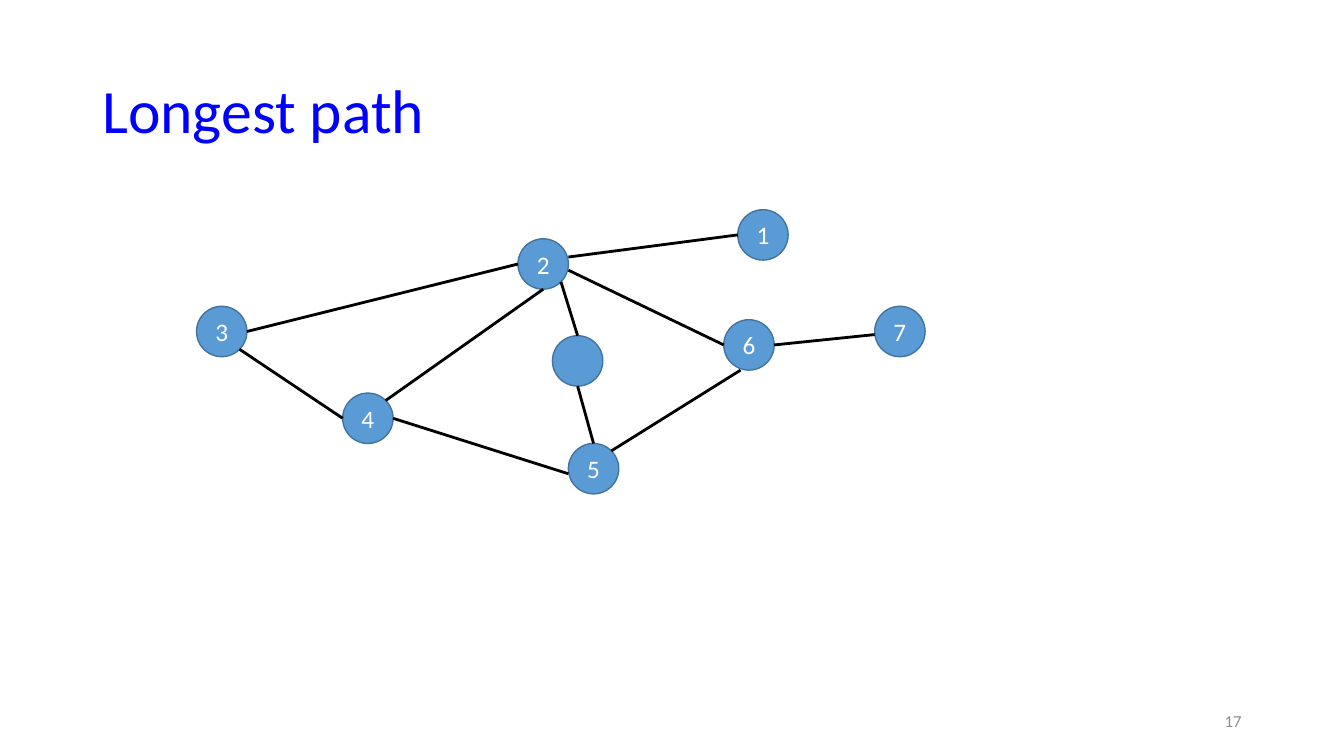
import dataclasses

import pptx
import pptx.dml.color
import pptx.enum.shapes
import pptx.enum.text
import pptx.oxml.ns
import pptx.shapes.base
import pptx.slide
import pptx.util
from lxml import etree

Pt = pptx.util.Pt
Align = pptx.enum.text.PP_ALIGN

COLOURS = {
    "title": "0000FF",
    "node": "5B9BD5",
    "node_line": "43739E",
    "node_text": "FFFFFF",
    "edge": "000000",
    "page_number": "8C8C8C",
}
FONT = "Calibri"
RADIUS = 18
DIAGONAL = 12.7

# Points on a node, as offsets from its centre
LEFT, RIGHT = (-RADIUS, 0), (RADIUS, 0)
TOP, BOTTOM = (0, -RADIUS), (0, RADIUS)
UPPER_RIGHT, LOWER_RIGHT = (DIAGONAL, -DIAGONAL), (DIAGONAL, DIAGONAL)


@dataclasses.dataclass(frozen=True)
class Node:
    x: float
    y: float
    label: str = ""


@dataclasses.dataclass(frozen=True)
class Edge:
    start: str
    start_offset: tuple[float, float]
    end: str
    end_offset: tuple[float, float]


NODES = {
    "1": Node(545, 167.8, "1"),
    "2": Node(388, 188.6, "2"),
    "3": Node(158.4, 236.8, "3"),
    "4": Node(262.8, 298.8, "4"),
    "5": Node(424, 334.8, "5"),
    "6": Node(535, 246.4, "6"),
    "7": Node(642.8, 236.8, "7"),
    "unlabelled": Node(412.6, 257.8),
}

EDGES = [
    Edge("3", RIGHT, "2", LEFT),
    Edge("3", LOWER_RIGHT, "4", LEFT),
    Edge("4", UPPER_RIGHT, "2", BOTTOM),
    Edge("4", RIGHT, "5", (-RADIUS, 3.6)),
    Edge("2", (RADIUS, 4.4), "6", LEFT),
    Edge("5", UPPER_RIGHT, "6", (-6, RADIUS)),
    Edge("6", RIGHT, "7", (-RADIUS, 2.2)),
    Edge("2", (RADIUS, -5), "1", LEFT),
    Edge("unlabelled", TOP, "2", LOWER_RIGHT),
    Edge("5", TOP, "unlabelled", BOTTOM),
]


def colour(name: str) -> pptx.dml.color.RGBColor:
    return pptx.dml.color.RGBColor.from_string(COLOURS[name])


def write_text(box: pptx.shapes.base.BaseShape, text: str, *, size: float, colour_name: str,
               align: Align = Align.LEFT, line_spacing: float = 1.0) -> None:
    frame = box.text_frame
    frame.word_wrap = True
    frame.vertical_anchor = pptx.enum.text.MSO_ANCHOR.MIDDLE
    para = frame.paragraphs[0]
    para.alignment = align
    para.line_spacing = line_spacing
    span = para.add_run()
    span.text = text
    span.font.name = FONT
    span.font.size = Pt(size)
    span.font.color.rgb = colour(colour_name)


def draw_node(page: pptx.slide.Slide, node: Node) -> None:
    circle = page.shapes.add_shape(
        pptx.enum.shapes.MSO_SHAPE.OVAL,
        Pt(node.x - RADIUS), Pt(node.y - RADIUS), Pt(2 * RADIUS), Pt(2 * RADIUS))
    circle.shadow.inherit = False
    circle.fill.solid()
    circle.fill.fore_color.rgb = colour("node")
    circle.line.color.rgb = colour("node_line")
    circle.line.width = Pt(1)
    if node.label:
        write_text(circle, node.label, size=18, colour_name="node_text", align=Align.CENTER)


def draw_edge(page: pptx.slide.Slide, edge: Edge) -> None:
    start, end = NODES[edge.start], NODES[edge.end]
    line = page.shapes.add_connector(
        pptx.enum.shapes.MSO_CONNECTOR.STRAIGHT,
        Pt(start.x + edge.start_offset[0]), Pt(start.y + edge.start_offset[1]),
        Pt(end.x + edge.end_offset[0]), Pt(end.y + edge.end_offset[1]))
    line.line.color.rgb = colour("edge")
    line.line.width = Pt(2)
    etree.SubElement(line._element.spPr, pptx.oxml.ns.qn("a:effectLst"))


def main() -> None:
    deck = pptx.Presentation()
    deck.slide_width, deck.slide_height = Pt(960), Pt(540)
    page = deck.slides.add_slide(deck.slide_layouts[6])

    title = page.shapes.add_textbox(Pt(66), Pt(28.8), Pt(828), Pt(104.4))
    write_text(title, "Longest path", size=44, colour_name="title", line_spacing=0.9)

    for node in NODES.values():
        draw_node(page, node)
    for edge in EDGES:
        draw_edge(page, edge)

    page_number = page.shapes.add_textbox(Pt(678), Pt(500.4), Pt(216), Pt(28.8))
    write_text(page_number, "17", size=12, colour_name="page_number", align=Align.RIGHT)

    deck.save("out.pptx")


if __name__ == "__main__":
    main()
